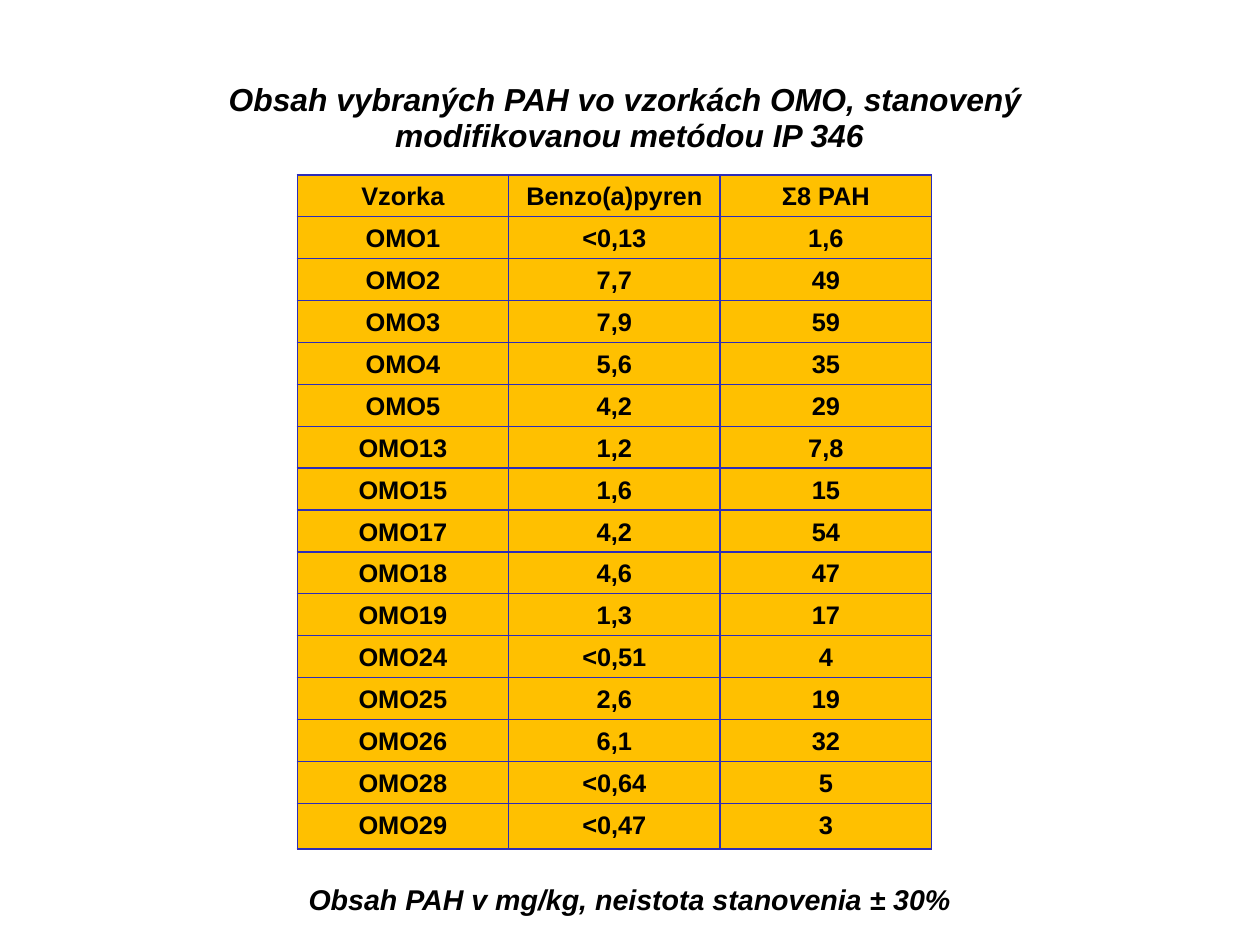
import copy

import pptx
import pptx.dml.color
import pptx.enum.text
import pptx.oxml
import pptx.oxml.ns
import pptx.util
from pptx.util import Inches

BLACK = pptx.dml.color.RGBColor(0x00, 0x00, 0x00)
AMBER = pptx.dml.color.RGBColor(0xFF, 0xC0, 0x00)
BLUE = pptx.dml.color.RGBColor(0x2D, 0x2D, 0xB9)

TITLE = "Obsah vybraných PAH vo vzorkách OMO, stanovený \vmodifikovanou metódou IP 346"
NOTE = "Obsah PAH v mg/kg, neistota stanovenia ± 30%"
ROWS = [
    ("Vzorka", "Benzo(a)pyren", "Ʃ8 PAH"),
    ("OMO1", "<0,13", "1,6"),
    ("OMO2", "7,7", "49"),
    ("OMO3", "7,9", "59"),
    ("OMO4", "5,6", "35"),
    ("OMO5", "4,2", "29"),
    ("OMO13", "1,2", "7,8"),
    ("OMO15", "1,6", "15"),
    ("OMO17", "4,2", "54"),
    ("OMO18", "4,6", "47"),
    ("OMO19", "1,3", "17"),
    ("OMO24", "<0,51", "4"),
    ("OMO25", "2,6", "19"),
    ("OMO26", "6,1", "32"),
    ("OMO28", "<0,64", "5"),
    ("OMO29", "<0,47", "3"),
]
COL = 1.85
ROW = 5.5 / 15
LAST = 0.4
CM = 1 / 2.54


def write(frame, text, size, spacing, italic=False):
    frame.text = text
    para = frame.paragraphs[0]
    para.alignment = pptx.enum.text.PP_ALIGN.CENTER
    para.line_spacing = spacing
    for run in para.runs:
        font = run.font
        font.name = "Arial"
        font.size = pptx.util.Pt(size)
        font.bold = True
        font.italic = italic
        font.color.rgb = BLACK
    # A line break takes the format of the text around it.
    for mark in para._p.findall(pptx.oxml.ns.qn("a:br")):
        mark.append(copy.deepcopy(para.runs[0]._r.rPr))


def place(shape, top, height, text, size):
    """Set a heading shape on the slide's centre line."""
    shape.left, shape.top = Inches(1.51), Inches(top)
    shape.width, shape.height = Inches(8), Inches(height)
    frame = shape.text_frame
    frame.word_wrap = True
    frame.auto_size = pptx.enum.text.MSO_AUTO_SIZE.NONE
    frame.vertical_anchor = pptx.enum.text.MSO_ANCHOR.MIDDLE
    frame.margin_left = frame.margin_right = 0
    frame.margin_top = frame.margin_bottom = 0
    write(frame, text, size, 0.93, italic=True)


def edge(cell):
    """Draw a blue line on all four sides of a cell."""
    props = cell._tc.get_or_add_tcPr()
    for index, side in enumerate(("lnL", "lnR", "lnT", "lnB")):
        line = pptx.oxml.parse_xml(
            f'<a:{side} {pptx.oxml.ns.nsdecls("a")} w="{pptx.util.Pt(1)}">'
            f'<a:solidFill><a:srgbClr val="{BLUE}"/></a:solidFill></a:{side}>'
        )
        props.insert(index, line)


def fill_cell(cell, text):
    cell.margin_left = cell.margin_right = cell.margin_top = Inches(0.1)
    cell.margin_bottom = Inches(0.05)
    cell.fill.solid()
    cell.fill.fore_color.rgb = AMBER
    write(cell.text_frame, text, 16, 0.87)
    edge(cell)


def add_grid(slide):
    count, width = len(ROWS), len(ROWS[0])
    height = ROW * (count - 1) + LAST
    table = slide.shapes.add_table(
        count, width, Inches(2.6), Inches(1.53),
        Inches(COL * width), Inches(height)).table
    table.horz_banding = False
    for row, texts in zip(table.rows, ROWS):
        row.height = Inches(ROW)
        for cell, text in zip(row.cells, texts):
            fill_cell(cell, text)
    table.rows[count - 1].height = Inches(LAST)


def main():
    deck = pptx.Presentation()
    deck.slide_width = Inches(28 * CM)
    deck.slide_height = Inches(21 * CM)
    slide = deck.slides.add_slide(deck.slide_layouts[5])
    place(slide.shapes.title, 0.69, 0.7, TITLE, 20)
    add_grid(slide)
    note = slide.shapes.add_textbox(0, 0, 0, 0)
    place(note, 7.68, 0.4, NOTE, 18)
    deck.save("out.pptx")


if __name__ == "__main__":
    main()
